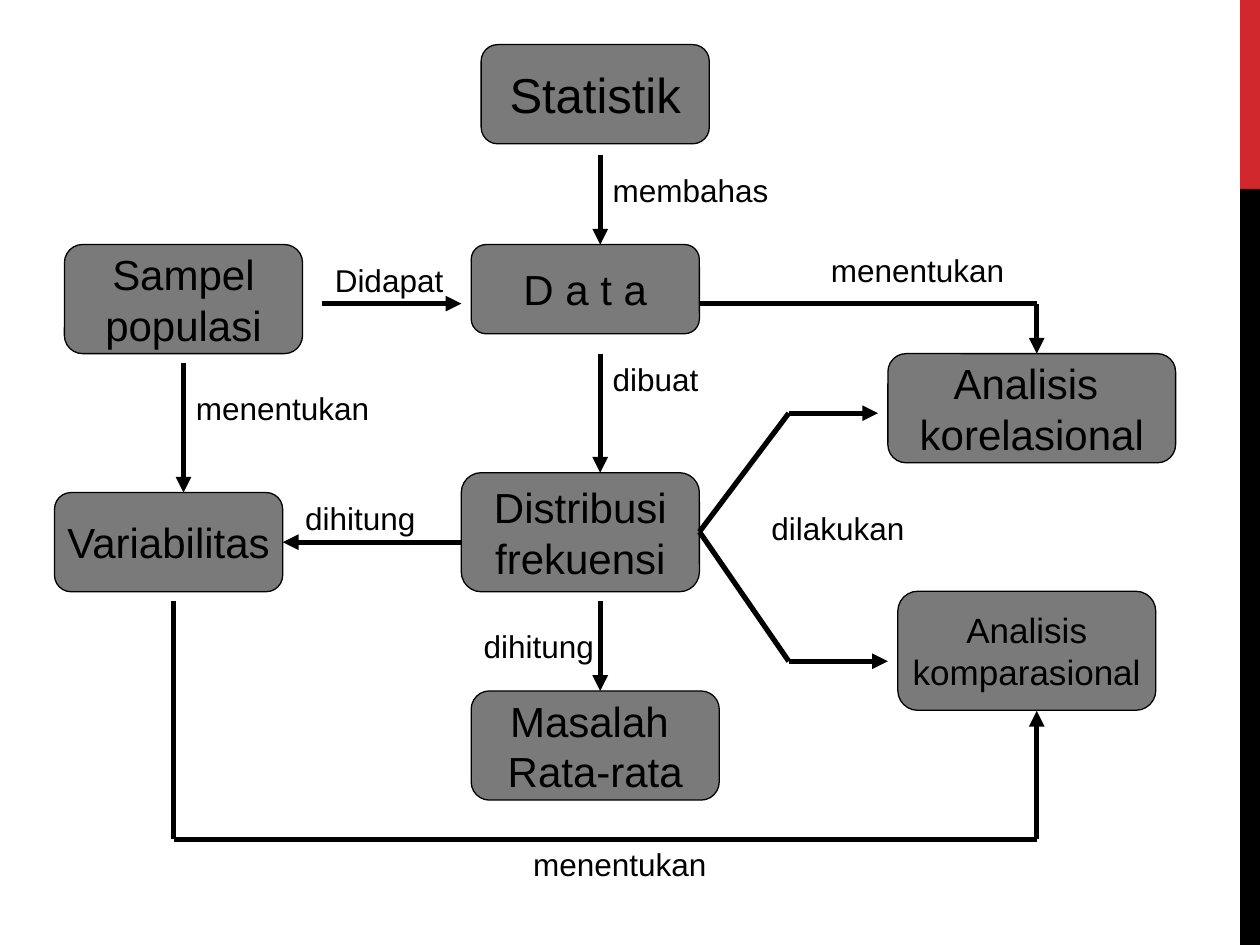
from lxml.etree import SubElement
from pptx import Presentation
from pptx.dml.color import RGBColor
from pptx.enum.shapes import MSO_CONNECTOR, MSO_SHAPE
from pptx.enum.text import MSO_ANCHOR, PP_ALIGN
from pptx.oxml.ns import qn
from pptx.util import Cm, Pt

COLORS = {"red": "D1282E", "black": "000000", "gray": "7A7A7A"}
FONT = "Arial"

# Centre lines and rows that several elements share, in cm
MID, RIGHT, FORK = 12.1, 20.9, 15.9
ROW, BASE = 6.12, 16.92

# text, left, top, width, height, text size
BOXES = [
    ("Statistik", 9.7, 0.9, 4.6, 2, 28),
    ("D a t a", 9.5, 4.93, 4.6, 1.8, 24),
    ("Analisis \nkorelasional", 17.9, 7.13, 5.8, 2.2, 24),
    ("Masalah \nRata-rata", 9.5, 13.93, 5, 2.2, 24),
    ("Analisis\nkomparasional", 18.1, 11.92, 5.2, 2.4, 20),
    ("Sampel\npopulasi", 1.3, 4.93, 4.8, 2.2, 24),
    ("Distribusi\nfrekuensi", 9.3, 9.53, 4.8, 2.4, 24),
    ("Variabilitas", 1.1, 9.93, 4.6, 2, 24),
]

# Each route ends in an arrowhead
ROUTES = [
    [(MID, 3.13), (MID, 4.93)],
    [(6.5, ROW), (9.3, ROW)],
    [(3.7, 7.32), (3.7, 9.93)],
    [(MID, 7.13), (MID, 9.53)],
    [(MID, 12.12), (MID, 13.93)],
    [(14.1, ROW), (RIGHT, ROW), (RIGHT, 7.13)],
    [(3.5, 12.12), (3.5, BASE), (RIGHT, BASE), (RIGHT, 14.33)],
    [(14.1, 10.72), (FORK, 8.33), (17.7, 8.33)],
    [(14.1, 10.72), (FORK, 13.33), (17.9, 13.33)],
    [(9.3, 10.93), (5.7, 10.93)],
]

# text, left, top, width
LABELS = [
    ("membahas", MID, 3.33, 5.6),
    ("Didapat", 6.5, 5.13, 3.4),
    ("menentukan", 3.7, 7.72, 4.6),
    ("menentukan", 10.5, BASE, 7.6),
    ("menentukan", 16.5, 4.93, 6.8),
    ("dilakukan", 15.3, 10.13, 5.2),
    ("dihitung", 9.5, 12.52, 4.8),
    ("dihitung", 5.9, 9.93, 3.4),
    ("dibuat", MID, 7.13, 4.2),
]


def color(name):
    return RGBColor.from_string(COLORS[name])


def apply(item, values):
    for key, value in values.items():
        setattr(item, key, value)


class Sketch:
    """Draws styled elements on the current slide; lengths in cm."""

    def __init__(self, slide):
        self.shapes = slide.shapes

    def words(self, frame, text, size, align, **values):
        """Fill the frame with text in the common style."""
        apply(frame, values)
        frame.text = text
        for para in frame.paragraphs:
            para.alignment = align
            apply(para.font, {"name": FONT, "size": Pt(size)})
            para.font.color.rgb = color("black")

    def shape(self, kind, fill, *area):
        item = self.shapes.add_shape(kind, *map(Cm, area))
        item.shadow.inherit = False
        item.fill.solid()
        item.fill.fore_color.rgb = color(fill)
        return item

    def bar(self, fill, *area):
        self.shape(MSO_SHAPE.RECTANGLE, fill, *area).line.fill.background()

    def box(self, text, left, top, width, height, size):
        item = self.shape(MSO_SHAPE.ROUNDED_RECTANGLE, "gray",
                          left, top, width, height)
        item.line.color.rgb = color("black")
        item.line.width = Pt(0.75)
        self.words(item.text_frame, text, size, PP_ALIGN.CENTER,
                   word_wrap=False, vertical_anchor=MSO_ANCHOR.MIDDLE)

    def route(self, points):
        """Join the points with straight lines, the last one an arrow."""
        for start, end in zip(points, points[1:]):
            line = self.shapes.add_connector(
                MSO_CONNECTOR.STRAIGHT, *map(Cm, start + end))
            line.line.color.rgb = color("black")
            line.line.width = Pt(3)
            props = line._element.spPr
            SubElement(props, qn("a:effectLst"))
        SubElement(props.find(qn("a:ln")), qn("a:tailEnd"), type="triangle")

    def label(self, text, left, top, width):
        item = self.shapes.add_textbox(*map(Cm, (left, top, width, 1.02)))
        self.words(item.text_frame, text, 18, PP_ALIGN.LEFT, word_wrap=True)


def main():
    deck = Presentation()
    apply(deck, {"slide_width": Cm(25.4), "slide_height": Cm(19.05)})
    sketch = Sketch(deck.slides.add_slide(deck.slide_layouts[6]))

    sketch.bar("red", 25, 0, 0.4, 3.81)
    sketch.bar("black", 25, 3.81, 0.4, 15.24)
    for box in BOXES:
        sketch.box(*box)
    for points in ROUTES:
        sketch.route(points)
    for label in LABELS:
        sketch.label(*label)
    deck.save("out.pptx")


if __name__ == "__main__":
    main()
